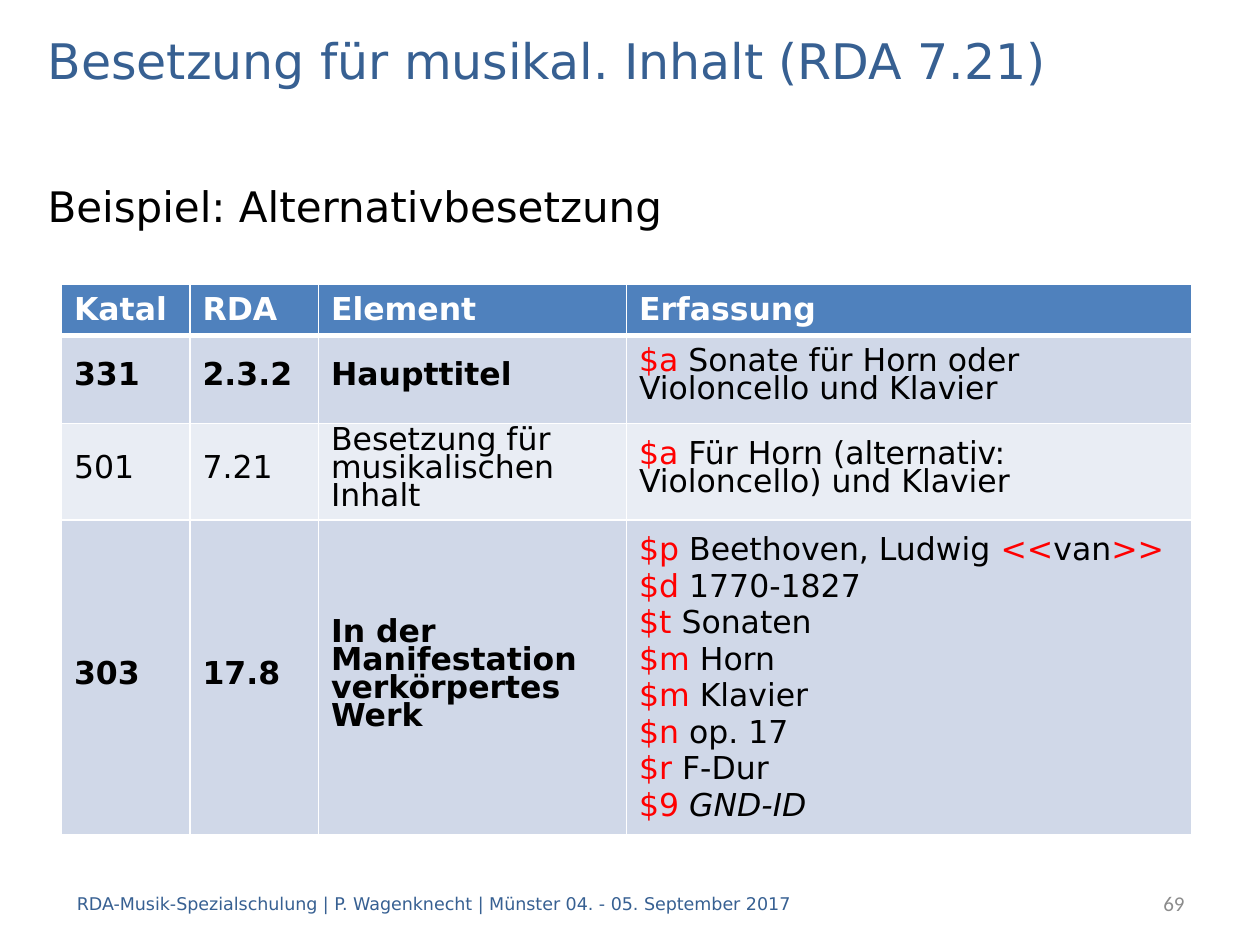
from dataclasses import dataclass

from lxml import etree
from pptx import Presentation
from pptx.dml.color import RGBColor
from pptx.enum.text import MSO_ANCHOR, PP_ALIGN
from pptx.oxml.ns import qn
from pptx.util import Cm, Pt

MIDDLE, TOP = MSO_ANCHOR.MIDDLE, MSO_ANCHOR.TOP
LEFT, RIGHT = PP_ALIGN.LEFT, PP_ALIGN.RIGHT


@dataclass(frozen=True)
class Theme:
    font: str = "DejaVu Sans"
    number_font: str = "Calibri"
    title: str = "376092"
    text: str = "000000"
    code: str = "FF0000"
    muted: str = "8C8C8C"
    white: str = "FFFFFF"
    header: str = "4F81BD"
    bands: tuple = ("D0D8E8", "E9EDF4")
    title_size: int = 28
    subtitle_size: int = 24
    table_size: int = 18
    number_size: int = 12
    footer_size: int = 10


THEME = Theme()

HEADERS = ("Katal", "RDA", "Element", "Erfassung")
# Each row: field number, RDA, Element, bold, lines of (subfield code, value)
ENTRIES = (
    ("331", "2.3.2", "Haupttitel", True,
     [("$a", "Sonate für Horn oder Violoncello und Klavier")]),
    ("501", "7.21", "Besetzung für musikalischen Inhalt", False,
     [("$a", "Für Horn (alternativ: Violoncello) und Klavier")]),
    ("303", "17.8", "In der Manifestation verkörpertes Werk", True,
     [("$p", "Beethoven, Ludwig <<van>>"), ("$d", "1770-1827"),
      ("$t", "Sonaten"), ("$m", "Horn"), ("$m", "Klavier"),
      ("$n", "op. 17"), ("$r", "F-Dur"), ("$9", "GND-ID")]),
)
COLUMN_WIDTHS = (2.59, 2.59, 6.21, 11.4)
ROW_HEIGHTS = (1, 1.78, 1.93, 5.94)


def add_run(paragraph, text, size, color, font=THEME.font, bold=False, italic=False):
    run = paragraph.add_run()
    run.text = text
    run.font.name = font
    run.font.size = Pt(size)
    run.font.bold = bold
    run.font.italic = italic
    run.font.color.rgb = RGBColor.from_string(color)


def add_text(slide, box, text, size, color, font=THEME.font, anchor=MIDDLE, align=LEFT):
    shape = slide.shapes.add_textbox(*(Cm(length) for length in box))
    frame = shape.text_frame
    frame.word_wrap = True
    frame.vertical_anchor = anchor
    paragraph = frame.paragraphs[0]
    paragraph.alignment = align
    add_run(paragraph, text, size, color, font)


def set_borders(cell, bottom_width):
    """White lines on all four sides, placed ahead of the cell's fill."""
    properties = cell._tc.get_or_add_tcPr()
    widths = {"a:lnL": 1, "a:lnR": 1, "a:lnT": 1, "a:lnB": bottom_width}
    for index, (side, width) in enumerate(widths.items()):
        line = etree.Element(qn(side), w=str(Pt(width)))
        fill = etree.SubElement(line, qn("a:solidFill"))
        etree.SubElement(fill, qn("a:srgbClr"), val=THEME.white)
        properties.insert(index, line)


def style_cell(cell, fill, anchor=MIDDLE, bottom_width=1):
    cell.fill.solid()
    cell.fill.fore_color.rgb = RGBColor.from_string(fill)
    cell.vertical_anchor = anchor
    set_borders(cell, bottom_width)


def set_tight_spacing(paragraph):
    paragraph.line_spacing = Pt(16)
    paragraph.space_before = paragraph.space_after = Pt(6)


def add_field(paragraph, code, value):
    """Red subfield code, then the value with its << >> marks in red too."""
    size = THEME.table_size
    add_run(paragraph, code + " ", size, THEME.code)
    before, opening, rest = value.partition("<<")
    inside, closing, _ = rest.partition(">>")
    parts = ((before, THEME.text), (opening, THEME.code),
             (inside, THEME.text), (closing, THEME.code))
    for text, color in parts:
        if text:
            add_run(paragraph, text, size, color, italic=code == "$9")


def fill_entry(cells, entry, fill):
    *labels, bold, fields = entry
    for cell in cells:
        style_cell(cell, fill)
    for cell, label in zip(cells, labels):
        paragraph = cell.text_frame.paragraphs[0]
        set_tight_spacing(paragraph)
        add_run(paragraph, label, THEME.table_size, THEME.text, bold=bold)
    frame = cells[-1].text_frame
    for index, (code, value) in enumerate(fields):
        paragraph = frame.add_paragraph() if index else frame.paragraphs[0]
        if len(fields) == 1:
            set_tight_spacing(paragraph)
        add_field(paragraph, code, value)


def add_catalogue_table(slide, left, top):
    table = slide.shapes.add_table(
        len(ROW_HEIGHTS), len(COLUMN_WIDTHS), Cm(left), Cm(top),
        Cm(sum(COLUMN_WIDTHS)), Cm(sum(ROW_HEIGHTS))).table
    for column, width in zip(table.columns, COLUMN_WIDTHS):
        column.width = Cm(width)
    for row, height in zip(table.rows, ROW_HEIGHTS):
        row.height = Cm(height)
    for cell, header in zip(table.rows[0].cells, HEADERS):
        style_cell(cell, THEME.header, TOP, bottom_width=3)
        add_run(cell.text_frame.paragraphs[0], header,
                THEME.table_size, THEME.white, bold=True)
    for index, entry in enumerate(ENTRIES):
        cells = list(table.rows[index + 1].cells)
        fill_entry(cells, entry, THEME.bands[index % 2])


def add_heading(slide, left, top, width):
    add_text(slide, (left, top, width, 1.42),
             "Besetzung für musikal. Inhalt (RDA 7.21)",
             THEME.title_size, THEME.title)
    add_text(slide, (left, top + 3.02, width, 1.3), "Beispiel: Alternativbesetzung",
             THEME.subtitle_size, THEME.text, anchor=TOP)


def add_footer(slide, left, top, width, height):
    number_width = 4.04
    add_text(slide, (left, top, 21.2, height),
             "RDA-Musik-Spezialschulung | P. Wagenknecht | Münster 04. - 05. September 2017",
             THEME.footer_size, THEME.title)
    add_text(slide, (left + width - number_width, top, number_width, height), "69",
             THEME.number_size, THEME.muted, THEME.number_font, align=RIGHT)


def main():
    presentation = Presentation()
    presentation.slide_width, presentation.slide_height = Cm(25.4), Cm(19.05)
    slide = presentation.slides.add_slide(presentation.slide_layouts[6])
    add_heading(slide, 0.71, 0.49, 24)
    add_catalogue_table(slide, 1.24, 5.74)
    add_footer(slide, 1.3, 17.7, 22.83, 1.02)
    presentation.save("out.pptx")


if __name__ == "__main__":
    main()
